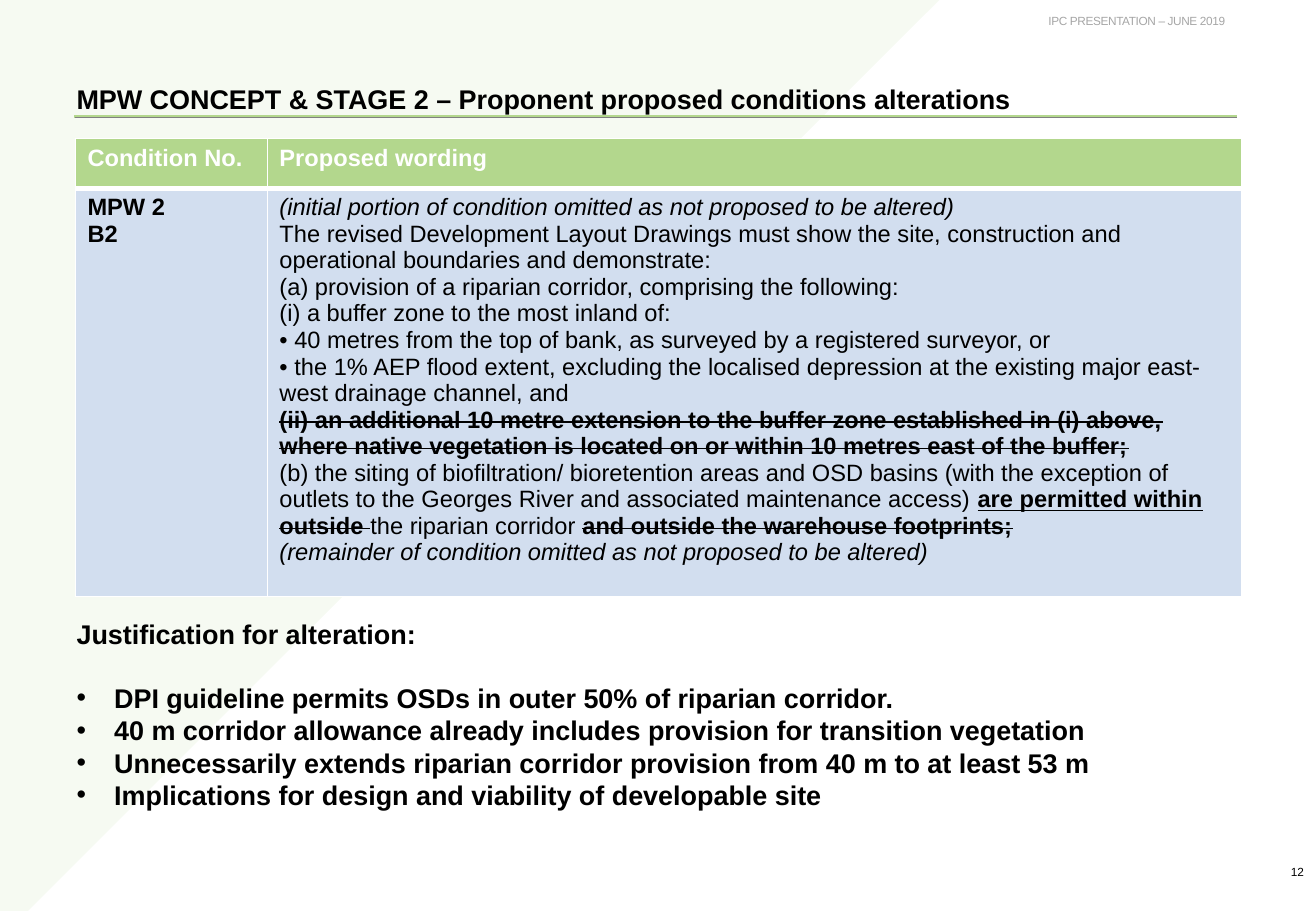
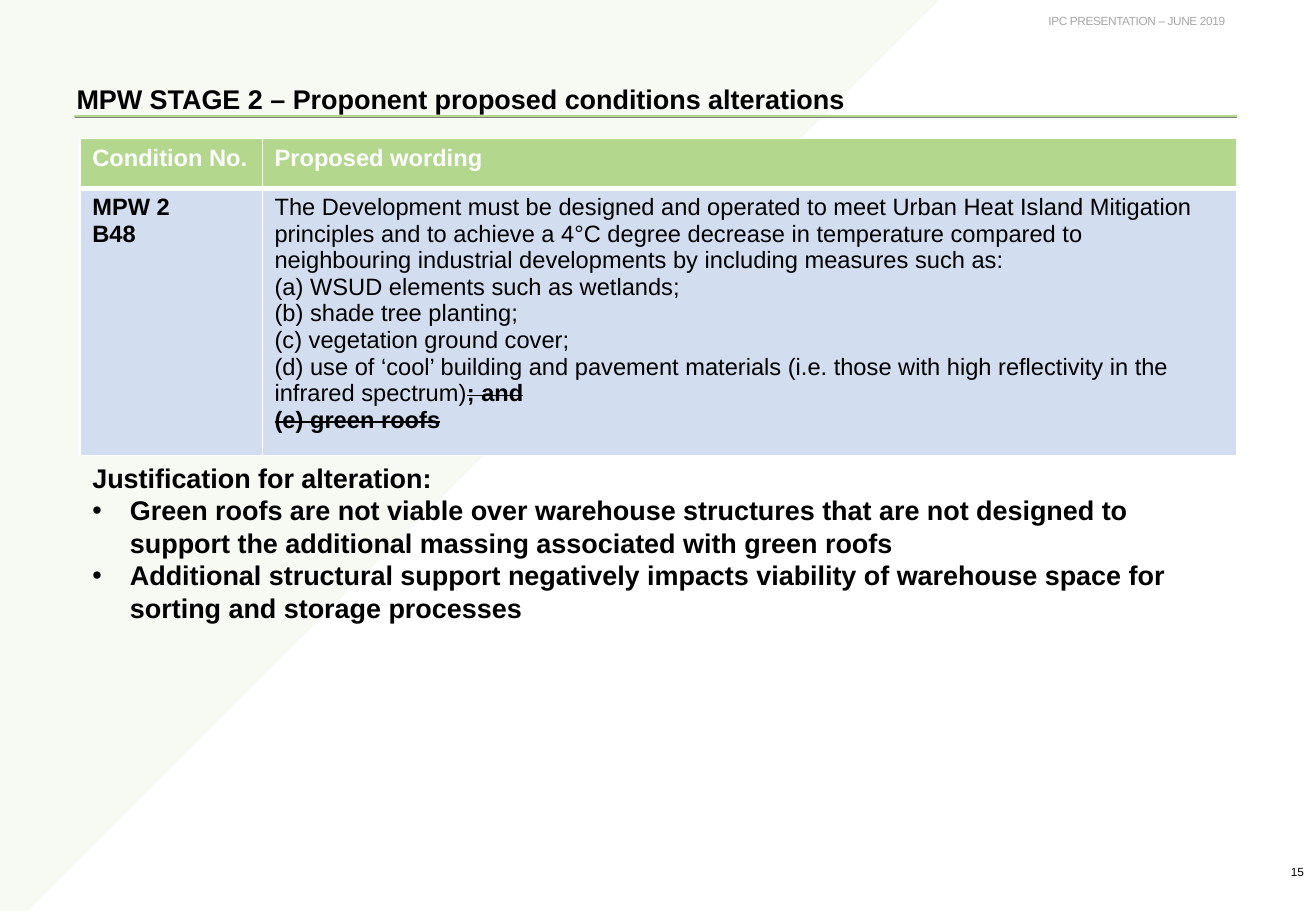
from lxml.etree import SubElement
from pptx import Presentation
from pptx.dml.color import RGBColor as Rgb
from pptx.enum.shapes import MSO_CONNECTOR as Conn, MSO_SHAPE as Shape
from pptx.enum.text import MSO_ANCHOR as Anchor, MSO_AUTO_SIZE as Fit, PP_ALIGN as Align
from pptx.oxml.ns import qn
from pptx.util import Pt

SCALE = 9144
FACE = "Arial"
INK = {"green": "B3D78D", "blue": "D2DEEF", "white": "FFFFFF",
       "black": "000000", "grey": "808080", "pale": "A6A6A6"}


def px(*nums):
    return [num * SCALE for num in nums]


def tint(name):
    return Rgb.from_string(INK[name])


class Deck:
    def __init__(self, wide, high):
        self.prs = Presentation()
        self.prs.slide_width, self.prs.slide_height = px(wide, high)
        self.slide = None

    def page(self, title, num):
        self.slide = self.prs.slides.add_slide(self.prs.slide_layouts[1])
        self.wedge(0, -37, 810)
        self.rule(61, 96, 1018, "green", 1.75)
        self.rule(62, 97, 1018, "grey", 0.5)
        head = self.label("IPC PRESENTATION – JUNE 2019", (723, 6, 295, 22), "pale")
        head.runs[0].font._element.set("spc", "-20")
        self.label(num, (1006, 712, 77, 12), "black", Anchor.MIDDLE)
        frame = self.place(self.slide.shapes.title, (53, 63, 1020, 51))
        self.fill(frame.paragraphs[0], title, 16, bold=True)

    def place(self, shape, box, anchor=Anchor.TOP):
        shape.left, shape.top, shape.width, shape.height = px(*box)
        frame = shape.text_frame
        frame.word_wrap = True
        frame.auto_size = Fit.NONE
        frame.vertical_anchor = anchor
        return frame

    def fill(self, para, text, size, color="black", bold=None, align=Align.LEFT):
        para.alignment = align
        para.space_before = Pt(0)
        font = para.font
        font.name, font.size = FACE, Pt(size)
        font.color.rgb = tint(color)
        parts = [(text, "")] if isinstance(text, str) else text
        marks = {mark for _, mark in parts}
        same = len(marks) == 1
        if same:
            mark = parts[0][1]
            font.bold = bool(bold) or "b" in mark
            font.italic = "i" in mark
        for words, mark in parts:
            run = para.add_run()
            run.text = words
            if not same:
                run.font.bold = "b" in mark
            if "u" in mark:
                run.font.underline = True
            if "s" in mark:
                run.font._element.set("strike", "sngStrike")

    def label(self, text, box, color, anchor=Anchor.TOP):
        frame = self.place(self.slide.shapes.add_textbox(*px(*box)), box, anchor)
        para = frame.paragraphs[0]
        self.fill(para, text, 7, color, align=Align.RIGHT)
        return para

    def rule(self, left, top, right, color, width):
        line = self.slide.shapes.add_connector(Conn.STRAIGHT, *px(left, top, right, top))
        line.line.color.rgb = tint(color)
        line.line.width = Pt(width)
        SubElement(line._element.spPr, qn("a:effectLst"))

    def wedge(self, left, top, side):
        shape = self.slide.shapes.add_shape(Shape.RIGHT_TRIANGLE, *px(left, top, side, side))
        shape.rotation = 90
        shape.shadow.inherit = False
        shape.line.fill.background()
        shape.fill.solid()
        shape.fill.fore_color.rgb = tint("green")
        color = shape._element.spPr.find(".//" + qn("a:srgbClr"))
        SubElement(color, qn("a:alpha"), val="11000")
        self.slide.shapes._spTree.insert(2, shape._element)

    def edge(self, cell, **widths):
        props = cell._tc.get_or_add_tcPr()
        for side in "LRTB":
            line = SubElement(props, qn("a:ln" + side), w=str(Pt(widths.get(side, 1))))
            fill = SubElement(line, qn("a:solidFill"))
            SubElement(fill, qn("a:srgbClr"), val=INK["white"])

    def cell(self, cell, paras, fill, color, bold, **widths):
        self.edge(cell, **widths)
        cell.fill.solid()
        cell.fill.fore_color.rgb = tint(fill)
        frame = cell.text_frame
        for pos, text in enumerate(paras):
            para = frame.add_paragraph() if pos else frame.paragraphs[0]
            self.fill(para, text, 14, color, bold)

    def table(self, left, cols, high, code, terms):
        rows = [41, high - 41]
        grid = self.slide.shapes.add_table(2, 2, *px(left, 114, sum(cols), high)).table
        for col, size in zip(grid.columns, px(*cols)):
            col.width = size
        for row, size in zip(grid.rows, px(*rows)):
            row.height = size
        for pos, name in enumerate(["Condition No.", "Proposed wording"]):
            self.cell(grid.cell(0, pos), [name], "green", "white", True, B=3)
        for pos, paras in enumerate([code, terms]):
            self.cell(grid.cell(1, pos), paras, "blue", "black", pos == 0, T=3)

    def reasons(self, box, items, gap=0):
        frame = self.place(self.slide.placeholders[1], box)
        for pos, text in enumerate(["Justification for alteration:"] + items):
            para = frame.add_paragraph() if pos else frame.paragraphs[0]
            props = para._p.get_or_add_pPr()
            inset = px(31)[0] if pos else 0
            props.set("marL", str(inset))
            props.set("indent", str(-inset))
            if pos:
                SubElement(props, qn("a:buFont"), typeface=FACE)
                SubElement(props, qn("a:buChar"), char="•")
            else:
                SubElement(props, qn("a:buNone"))
            self.fill(para, text, 16, bold=True)
            if pos == 1:
                para.space_before = Pt(gap)


def main():
    deck = Deck(1083, 750)

    deck.page("MPW CONCEPT & STAGE 2 – Proponent proposed conditions alterations", "12")
    deck.table(62, [158, 802], 377, ["MPW 2", "B2"], [
        [("(initial portion of condition omitted as not proposed to be altered)", "i")],
        "The revised Development Layout Drawings must show the site, construction and "
        "operational boundaries and demonstrate:",
        "(a) provision of a riparian corridor, comprising the following:",
        "(i) a buffer zone to the most inland of:",
        "• 40 metres from the top of bank, as surveyed by a registered surveyor, or",
        "• the 1% AEP flood extent, excluding the localised depression at the existing "
        "major east-west drainage channel, and",
        [("(ii) an additional 10 metre extension to the buffer zone established in (i) above, "
          "where native vegetation is located on or within 10 metres east of the buffer;", "bs")],
        [("(b) the siting of biofiltration/ bioretention areas and OSD basins (with the "
          "exception of outlets to the Georges River and associated maintenance access) ", ""),
         ("are permitted within ", "bu"),
         ("outside ", "bs"),
         ("the riparian corridor ", ""),
         ("and outside the warehouse footprints;", "bs")],
        [("(remainder of condition omitted as not proposed to be altered)", "i")],
    ])
    deck.reasons((53, 503, 968, 184), [
        "DPI guideline permits OSDs in outer 50% of riparian corridor.",
        "40 m corridor allowance already includes provision for transition vegetation",
        "Unnecessarily extends riparian corridor provision from 40 m to at least 53 m",
        "Implications for design and viability of developable site",
    ], gap=19)

    deck.page("MPW STAGE 2 – Proponent proposed conditions alterations", "15")
    deck.table(66, [150, 802], 261, ["MPW 2", "B48"], [
        "The Development must be designed and operated to meet Urban Heat Island Mitigation "
        "principles and to achieve a 4°C degree decrease in temperature compared to "
        "neighbouring industrial developments by including measures such as:",
        "(a) WSUD elements such as wetlands;",
        "(b) shade tree planting;",
        "(c) vegetation ground cover;",
        [("(d) use of ‘cool’ building and pavement materials (i.e. those with high "
          "reflectivity in the infrared spectrum)", ""),
         ("; and", "bs")],
        [("(e) green roofs", "bs")],
    ])
    deck.reasons((66, 375, 951, 150), [
        "Green roofs are not viable over warehouse structures that are not designed to "
        "support the additional massing associated with green roofs",
        "Additional structural support negatively impacts viability of warehouse space for "
        "sorting and storage processes",
    ])

    deck.prs.save("out.pptx")


if __name__ == "__main__":
    main()
